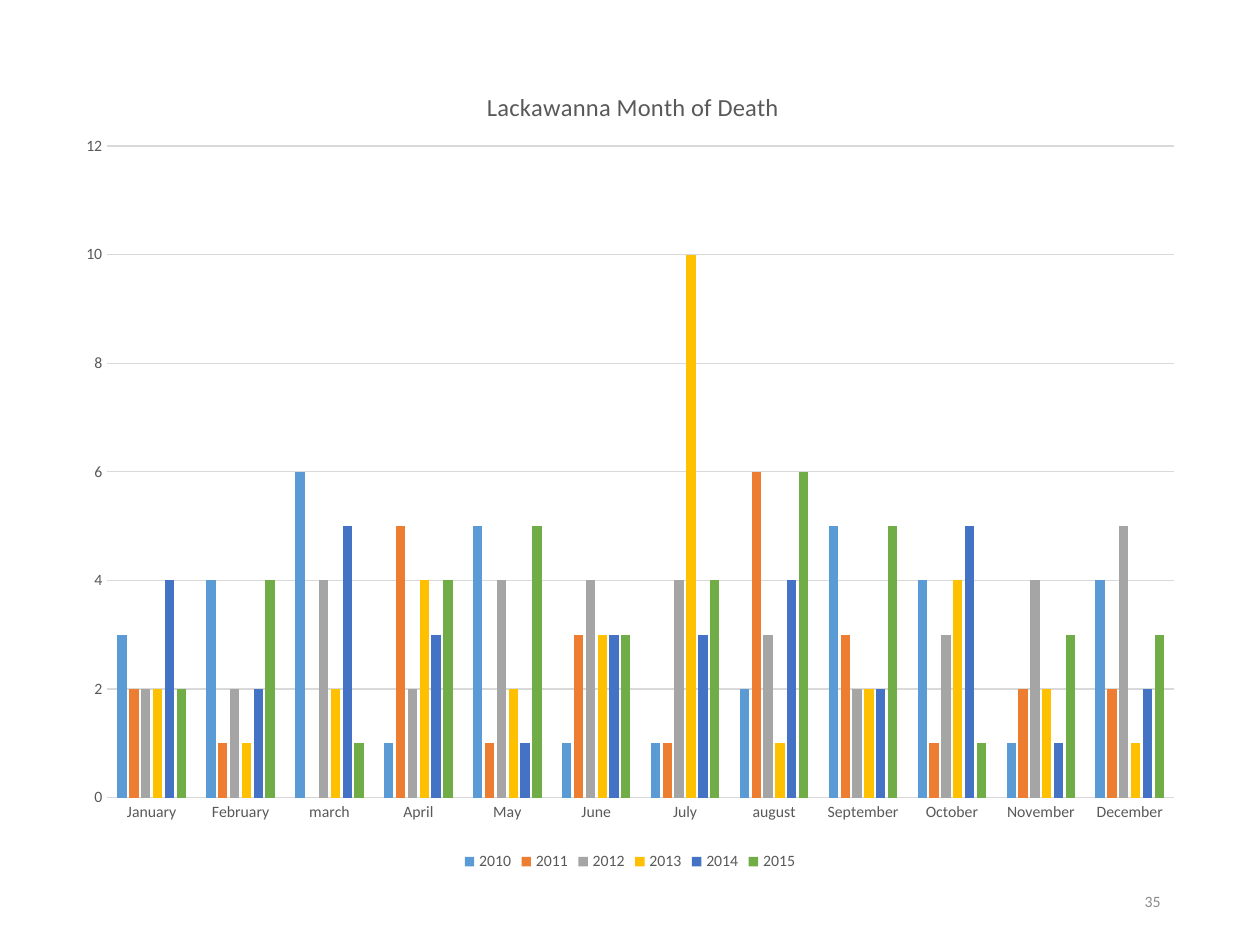
import lxml.etree
import pptx
import pptx.chart.data
import pptx.dml.color
import pptx.enum.chart
import pptx.enum.text
import pptx.oxml.ns
import pptx.util

EMU_PER_PX = 914400 / 126
FONT = "Calibri"
GRAY = "595959"
LINE_GRAY = "D9D9D9"

MONTHS = ["January", "February", "march", "April", "May", "June", "July",
          "august", "September", "October", "November", "December"]
DEATHS_BY_YEAR = {
    "2010": ("5B9BD5", [3, 4, 6, 1, 5, 1, 1, 2, 5, 4, 1, 4]),
    "2011": ("ED7D31", [2, 1, 0, 5, 1, 3, 1, 6, 3, 1, 2, 2]),
    "2012": ("A5A5A5", [2, 2, 4, 2, 4, 4, 4, 3, 2, 3, 4, 5]),
    "2013": ("FFC000", [2, 1, 2, 4, 2, 3, 10, 1, 2, 4, 2, 1]),
    "2014": ("4472C4", [4, 2, 5, 3, 1, 3, 3, 4, 2, 5, 1, 2]),
    "2015": ("70AD47", [2, 4, 1, 4, 5, 3, 4, 6, 5, 1, 3, 3]),
}


def px(length):
    """Turn pixels into EMU."""
    return pptx.util.Emu(round(length * EMU_PER_PX))


def color(hex_string):
    """Turn a hex string into a colour."""
    return pptx.dml.color.RGBColor.from_string(hex_string)


def style_font(font, size, hex_string):
    """Set face, size and colour of a font."""
    font.name = FONT
    font.size = pptx.util.Pt(size)
    font.bold = False
    font.color.rgb = color(hex_string)


def style_line(line):
    """Give a chart line its thin gray stroke."""
    line.color.rgb = color(LINE_GRAY)
    line.width = pptx.util.Pt(0.75)


def set_layout(parent, index, **settings):
    """Place a chart part by hand, in fractions of the chart."""
    qn = pptx.oxml.ns.qn
    for automatic in parent.findall(qn("c:layout")):
        parent.remove(automatic)
    layout = lxml.etree.Element(qn("c:layout"))
    manual = lxml.etree.SubElement(layout, qn("c:manualLayout"))
    for tag, value in settings.items():
        lxml.etree.SubElement(manual, qn("c:" + tag)).set("val", str(value))
    parent.insert(index, layout)


def add_month_chart(slide, left, top, width, height):
    """Draw the clustered columns of deaths by month and year."""
    deaths = pptx.chart.data.CategoryChartData()
    deaths.categories = MONTHS
    for year, (_, counts) in DEATHS_BY_YEAR.items():
        deaths.add_series(year, counts)
    chart = slide.shapes.add_chart(
        pptx.enum.chart.XL_CHART_TYPE.COLUMN_CLUSTERED,
        px(left), px(top), px(width), px(height), deaths).chart
    style_font(chart.font, 10, "000000")

    chart.has_title = True
    heading = chart.chart_title.text_frame
    heading.text = "Lackawanna Month of Death"
    style_font(heading.paragraphs[0].runs[0].font, 14, GRAY)
    chart.chart_title.include_in_layout = False
    set_layout(chart.chart_title._element, 1,
               xMode="edge", yMode="edge", x=0.37, y=0.04)

    plot = chart.plots[0]
    plot.gap_width = 219
    plot.overlap = -27
    plot.vary_by_categories = False
    for series, (fill, _) in zip(plot.series, DEATHS_BY_YEAR.values()):
        series.format.fill.solid()
        series.format.fill.fore_color.rgb = color(fill)
        series.invert_if_negative = False
    set_layout(chart._chartSpace.chart.plotArea, 0,
               layoutTarget="inner", xMode="edge", yMode="edge",
               x=round(44 / width, 3), y=round(93 / height, 3),
               w=round(1067 / width, 3), h=round(652 / height, 3))

    months, counts = chart.category_axis, chart.value_axis
    for axis in (months, counts):
        axis.major_tick_mark = pptx.enum.chart.XL_TICK_MARK.NONE
        axis.minor_tick_mark = pptx.enum.chart.XL_TICK_MARK.NONE
        style_font(axis.tick_labels.font, 9, GRAY)
    style_line(months.format.line)
    counts.format.line.fill.background()
    counts.minimum_scale, counts.maximum_scale, counts.major_unit = 0, 12, 2
    counts.has_major_gridlines = True
    style_line(counts.major_gridlines.format.line)

    chart.has_legend = True
    chart.legend.position = pptx.enum.chart.XL_LEGEND_POSITION.BOTTOM
    chart.legend.include_in_layout = False
    style_font(chart.legend.font, 9, GRAY)


def add_page_number(slide, left, top, width, height):
    """Write the page number at the right of its box."""
    page = slide.shapes.add_textbox(
        px(left), px(top), px(width), px(height)).text_frame
    page.word_wrap = True
    page.vertical_anchor = pptx.enum.text.MSO_ANCHOR.MIDDLE
    page.text = "35"
    page.paragraphs[0].alignment = pptx.enum.text.PP_ALIGN.RIGHT
    style_font(page.paragraphs[0].runs[0].font, 9, "8C8C8C")


def main():
    """Build the slide and save it."""
    deck = pptx.Presentation()
    deck.slide_width, deck.slide_height = px(1260), px(945)
    slide = deck.slides.add_slide(deck.slide_layouts[6])
    add_page_number(slide, 890, 876, 283, 50)
    add_month_chart(slide, 63, 53, 1134, 823)
    deck.save("out.pptx")


if __name__ == "__main__":
    main()
